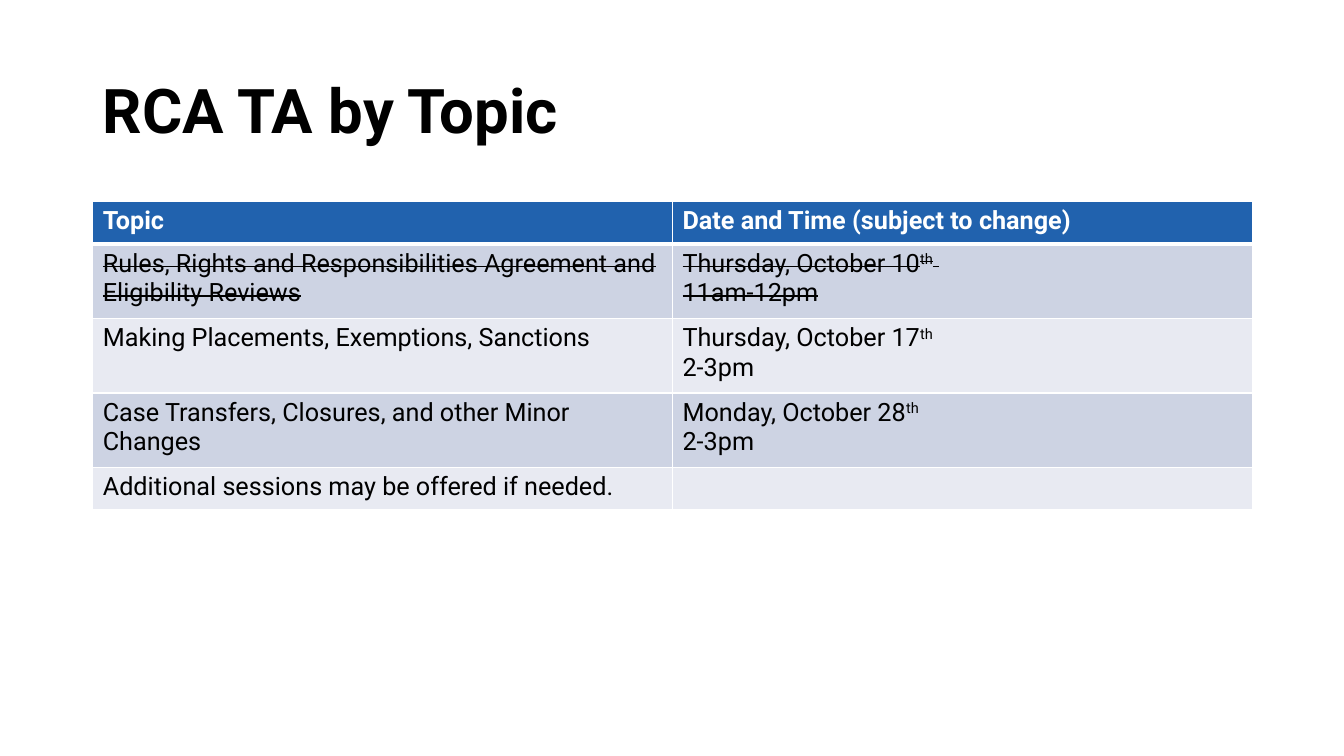
from lxml import etree
from pptx import Presentation
from pptx.dml.color import RGBColor
from pptx.enum.text import MSO_ANCHOR, PP_ALIGN
from pptx.oxml.ns import qn
from pptx.util import Inches, Pt

FONT = "Roboto"
COLORS = {
    "black": "000000",
    "white": "FFFFFF",
    "header": "2162AE",
    "odd_row": "CDD3E3",
    "even_row": "E8EAF2",
}
# Each cell is a list of paragraphs; "^" sets off superscript text
HEADINGS = ("Topic", "Date and Time (subject to change)")
SESSIONS = [
    (["Rules, Rights and Responsibilities Agreement and Eligibility Reviews"],
     ["Thursday, October 10^th^ ", "11am-12pm"]),
    (["Making Placements, Exemptions, Sanctions"],
     ["Thursday, October 17^th", "2-3pm"]),
    (["Case Transfers, Closures, and other Minor Changes"],
     ["Monday, October 28^th", "2-3pm"]),
    (["Additional sessions may be offered if needed."], [""]),
]
PAST_SESSIONS = 1
ROW_HEIGHTS = (0.42, 0.74, 0.74, 0.74, 0.42)


def color(name):
    return RGBColor.from_string(COLORS[name])


def style_font(paragraph, size, color_name, bold):
    font = paragraph.font
    font.name, font.size, font.bold = FONT, Pt(size), bold
    font.color.rgb = color(color_name)


def add_title(slide, left, top, width, height):
    title = slide.shapes.title
    title.left, title.top = Inches(left), Inches(top)
    title.width, title.height = Inches(width), Inches(height)
    frame = title.text_frame
    frame.text = "RCA TA by Topic"
    frame.vertical_anchor = MSO_ANCHOR.MIDDLE
    paragraph = frame.paragraphs[0]
    paragraph.alignment = PP_ALIGN.LEFT
    paragraph.line_spacing = 0.9
    style_font(paragraph, 44, "black", True)


def set_borders(cell, bottom_width):
    properties = cell._tc.get_or_add_tcPr()
    for side, points in (("L", 1), ("R", 1), ("T", 1), ("B", bottom_width)):
        line = etree.SubElement(properties, qn(f"a:ln{side}"), w=str(Pt(points)))
        fill = etree.SubElement(line, qn("a:solidFill"))
        etree.SubElement(fill, qn("a:srgbClr"), val=COLORS["white"])


def fill_cell(cell, lines, fill_name, is_header, struck):
    set_borders(cell, 3 if is_header else 1)
    cell.fill.solid()
    cell.fill.fore_color.rgb = color(fill_name)
    frame = cell.text_frame
    for index, line in enumerate(lines):
        paragraph = frame.add_paragraph() if index else frame.paragraphs[0]
        style_font(paragraph, 18, "white" if is_header else "black", is_header)
        for part, text in enumerate(line.split("^") if line else []):
            run = paragraph.add_run()
            run.text = text
            run_properties = run._r.get_or_add_rPr()
            if struck:
                run_properties.set("strike", "sngStrike")
            if part % 2:
                run_properties.set("baseline", "30000")


def add_schedule(slide, left, top, width):
    rows = [[[heading] for heading in HEADINGS], *SESSIONS]
    frame = slide.shapes.add_table(len(rows), len(HEADINGS), Inches(left), Inches(top),
                                   Inches(width), Inches(sum(ROW_HEIGHTS)))
    table = frame.table
    for column in table.columns:
        column.width = Inches(width / len(HEADINGS))
    for row_index, (row, height) in enumerate(zip(rows, ROW_HEIGHTS)):
        table.rows[row_index].height = Inches(height)
        is_header = row_index == 0
        band = "odd_row" if row_index % 2 else "even_row"
        for column_index, lines in enumerate(row):
            fill_cell(table.cell(row_index, column_index), lines,
                      "header" if is_header else band, is_header,
                      1 <= row_index <= PAST_SESSIONS)


def main():
    presentation = Presentation()
    presentation.slide_width = Inches(13.33)
    presentation.slide_height = Inches(7.5)
    slide = presentation.slides.add_slide(presentation.slide_layouts[5])
    add_title(slide, 0.92, 0.4, 11.5, 1.45)
    add_schedule(slide, 0.92, 2, 11.5)
    presentation.save("out.pptx")


if __name__ == "__main__":
    main()
